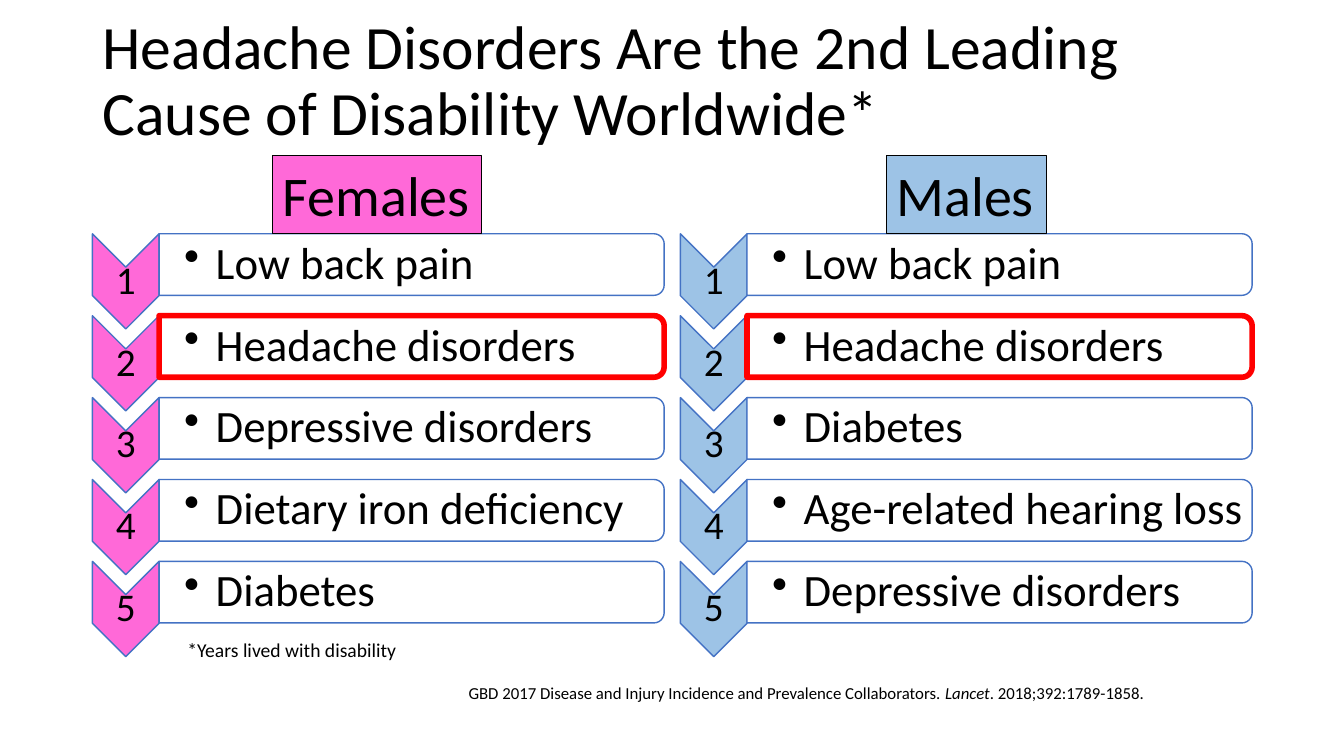
from lxml import etree
from pptx import Presentation
from pptx.dml.color import RGBColor
from pptx.enum.shapes import MSO_SHAPE
from pptx.enum.text import MSO_ANCHOR, MSO_AUTO_SIZE, PP_ALIGN
from pptx.oxml.ns import qn
from pptx.util import Pt

CHEVRON, BAR, RECTANGLE = MSO_SHAPE.CHEVRON, MSO_SHAPE.ROUND_2_SAME_RECTANGLE, MSO_SHAPE.RECTANGLE
TOP, MIDDLE = MSO_ANCHOR.TOP, MSO_ANCHOR.MIDDLE
LEFT, CENTER = PP_ALIGN.LEFT, PP_ALIGN.CENTER
NO_FIT, GROW = MSO_AUTO_SIZE.NONE, MSO_AUTO_SIZE.SHAPE_TO_FIT_TEXT

BLACK, WHITE, BLUE, RED = "000000", "FFFFFF", "4472C4", "FF0000"
PINK, LIGHT_BLUE = "FF69D8", "9DC3E6"

ROW_TOP, ROW_PITCH = 167, 58.5
CHEVRON_WIDTH, CHEVRON_HEIGHT = 47.6, 68
BAR_WIDTH, BAR_HEIGHT = 360.8, 44
HIGHLIGHTED_RANK = 2

COLUMNS = [
    (66, PINK, ["Low back pain", "Headache disorders", "Depressive disorders",
                "Dietary iron deficiency", "Diabetes"]),
    (486, LIGHT_BLUE, ["Low back pain", "Headache disorders", "Diabetes",
                       "Age-related hearing loss", "Depressive disorders"]),
]


def color(value):
    return RGBColor.from_string(value)


class SlideBuilder:
    font = "Calibri"

    def __init__(self, page):
        self.page = page

    def style(self, para, size, align=LEFT, spacing=None):
        para.alignment = align
        if spacing:
            para.line_spacing = spacing
        para.font.name = self.font
        para.font.size = Pt(size)
        para.font.color.rgb = color(BLACK)

    def title(self, text, left, top, width, height):
        box = self.page.shapes.title
        box.left, box.top, box.width, box.height = Pt(left), Pt(top), Pt(width), Pt(height)
        frame = box.text_frame
        frame.text = text
        frame.word_wrap = True
        frame.auto_size = NO_FIT
        frame.vertical_anchor = MIDDLE
        self.style(frame.paragraphs[0], 44, spacing=0.9)

    def shape(self, kind, left, top, width, height, fill, line, weight):
        shape = self.page.shapes.add_shape(kind, Pt(left), Pt(top), Pt(width), Pt(height))
        shape.shadow.inherit = False
        shape.fill.solid()
        shape.fill.fore_color.rgb = color(fill)
        shape.line.color.rgb = color(line)
        shape.line.width = Pt(weight)
        return shape

    def turned(self, kind, left, top, width, height, fill, line=BLUE, weight=1):
        shape = self.shape(kind, left + (width - height) / 2, top + (height - width) / 2,
                           height, width, fill, line, weight)
        shape.rotation = 90
        return shape

    def bar(self, left, top, line, weight):
        shape = self.turned(BAR, left, top, BAR_WIDTH, BAR_HEIGHT, WHITE, line, weight)
        fill = shape.fill.fore_color._xFill
        etree.SubElement(fill[0], qn("a:alpha"), val="90000")

    def row_text(self, text, left, top, width, height, size, align=LEFT, bullet=False):
        box = self.page.shapes.add_textbox(Pt(left), Pt(top), Pt(width), Pt(height))
        frame = box.text_frame
        frame.word_wrap = True
        frame.vertical_anchor = MIDDLE
        frame.margin_left = Pt(18 if bullet else 1.4)
        frame.margin_right = frame.margin_top = frame.margin_bottom = Pt(1.4)
        para = frame.paragraphs[0]
        para.text = text
        if bullet:
            para.level = 1
            properties = para._p.get_or_add_pPr()
            properties.set("marL", str(Pt(22.5)))
            properties.set("indent", str(Pt(-22.5)))
            etree.SubElement(properties, qn("a:buChar"), char="•")
        self.style(para, size, align, 0.9)

    def fitted(self, box, spans, size):
        frame = box.text_frame
        frame.word_wrap = False
        frame.auto_size = GROW
        frame.vertical_anchor = TOP
        para = frame.paragraphs[0]
        for text, italic in spans:
            span = para.add_run()
            span.text = text
            if italic:
                span.font.italic = True
        self.style(para, size)

    def heading(self, text, left, top, width, height, fill):
        box = self.shape(RECTANGLE, left, top, width, height, fill, BLACK, 0.75)
        self.fitted(box, [(text, False)], 40)

    def note(self, spans, left, top, width, height, size):
        box = self.page.shapes.add_textbox(Pt(left), Pt(top), Pt(width), Pt(height))
        self.fitted(box, spans, size)

    def ranking(self, left, fill, causes):
        bar_left = left + CHEVRON_WIDTH
        for rank, cause in enumerate(causes, 1):
            top = ROW_TOP + (rank - 1) * ROW_PITCH
            line, weight = (RED, 4) if rank == HIGHLIGHTED_RANK else (BLUE, 1)
            self.turned(CHEVRON, left, top, CHEVRON_WIDTH, CHEVRON_HEIGHT, fill)
            self.row_text(str(rank), left, top + 24, CHEVRON_WIDTH, 20, 28, CENTER)
            self.bar(bar_left, top, line, weight)
            self.row_text(cause, bar_left, top + 2, BAR_WIDTH - 2, BAR_HEIGHT - 4, 32, bullet=True)


def main():
    deck = Presentation()
    deck.slide_width, deck.slide_height = Pt(960), Pt(540)
    builder = SlideBuilder(deck.slides.add_slide(deck.slide_layouts[5]))
    builder.title("Headache Disorders Are the 2nd Leading Cause of Disability Worldwide*",
                  66, 8, 828, 102)
    for left, fill, causes in COLUMNS:
        builder.ranking(left, fill, causes)
    builder.heading("Females", 195, 111, 149, 55.7, PINK)
    builder.heading("Males", 633.5, 111, 114, 55.7, LIGHT_BLUE)
    builder.note([("GBD 2017 Disease and Injury Incidence and Prevalence Collaborators. ", False),
                  ("Lancet", True), (". 2018;392:1789-1858.", False)], 327.6, 484, 502.5, 21.8, 12)
    builder.note([("*Years lived with disability", False)], 126.7, 452, 165.6, 24.2, 14)
    deck.save("out.pptx")


if __name__ == "__main__":
    main()
